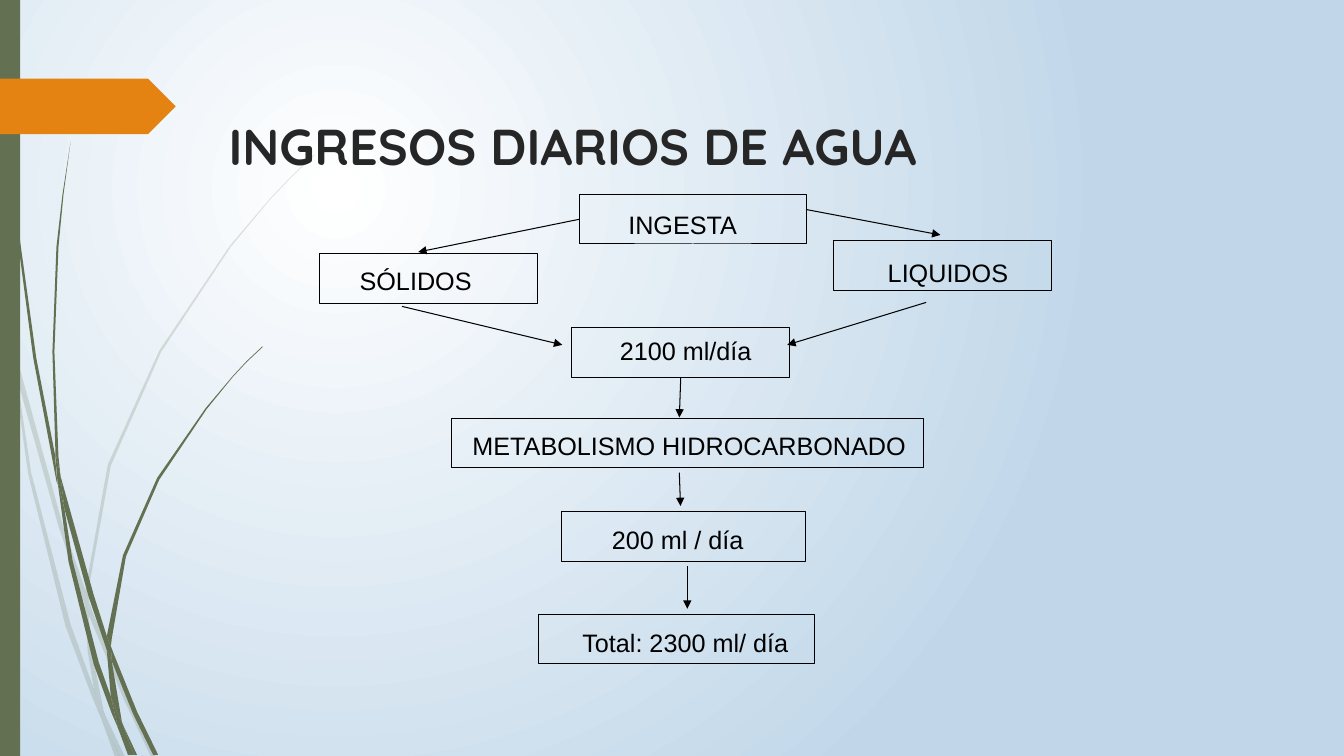
from lxml import etree
from pptx import Presentation
from pptx.dml.color import RGBColor
from pptx.enum.shapes import MSO_CONNECTOR as CONN, MSO_SHAPE as SHAPE
from pptx.enum.text import PP_ALIGN as ALIGN
from pptx.oxml import parse_xml
from pptx.oxml.ns import nsdecls, qn
from pptx.util import Cm, Pt

GREEN, ORANGE, BLACK = "637052", "E48312", "000000"


def rgb(value):
    return RGBColor.from_string(value)


def add_text(text, x, y, w, h, size=18, font="Arial", color=BLACK,
             bold=False, align=ALIGN.CENTER, wrap=False):
    tf = s.shapes.add_textbox(Cm(x), Cm(y), Cm(w), Cm(h)).text_frame
    tf.word_wrap = wrap
    p = tf.paragraphs[0]
    p.alignment = align
    r = p.add_run()
    r.text = text
    r.font.size, r.font.name, r.font.bold = Pt(size), font, bold
    r.font.color.rgb = rgb(color)


prs = Presentation()
prs.slide_width, prs.slide_height = Cm(33.87), Cm(19.05)
s = prs.slides.add_slide(prs.slide_layouts[6])

fill = s.background.fill
fill.solid()
solid = s.element.find(".//" + qn("p:bgPr")).find(qn("a:solidFill"))
solid.getparent().replace(solid, parse_xml(
    f'<a:gradFill {nsdecls("a")} rotWithShape="1"><a:gsLst>'
    '<a:gs pos="0"><a:srgbClr val="FFFFFF"/></a:gs>'
    '<a:gs pos="100000"><a:srgbClr val="C1D7E9"/></a:gs></a:gsLst>'
    '<a:path path="circle"><a:fillToRect l="50000" t="50000" r="100000" b="100000"/>'
    '</a:path></a:gradFill>'))

pale_blades = [
    [(11, 350), (9, 322), (0, 282), (0, 299), (10, 344)],
    [(58, 522), (84, 599), (85, 586), (62, 520), (14, 345), (17, 376)],
    [(92, 607), (88, 596), (88, 610), (123, 694), (150, 751), (155, 751), (127, 692)],
    [(119, 751), (124, 751), (105, 711)],
    [(93, 683), (70, 619), (31, 469), (17, 376), (11, 350), (28, 470), (65, 621),
     (92, 693), (101, 714), (99, 707)],
    [(84, 599), (87, 646), (93, 683), (96, 692), (105, 711), (103, 706), (91, 646),
     (88, 610), (88, 608)],
    [(88, 584), (110, 462), (160, 349), (229, 245), (268, 198), (290, 175), (312, 154),
     (312, 153), (289, 175), (268, 197), (228, 244), (158, 348), (107, 461), (85, 584),
     (85, 586), (88, 596)],
    [(101, 714), (114, 751), (119, 751)],
    [(88, 608), (88, 610), (88, 596), (85, 586), (84, 599)],
    [(96, 692), (93, 683), (99, 707), (101, 714), (119, 751), (105, 711)],
]
dark_blades = [
    [(7, 110), (17, 233), (33, 355), (56, 477), (57, 481), (55, 457), (55, 453),
     (36, 355), (19, 232), (8, 109), (5, 48), (4, 0), (3, 0), (4, 48)],
    [(88, 592), (106, 645), (106, 633), (106, 631), (93, 590), (60, 472), (64, 505)],
    [(113, 649), (110, 641), (111, 656), (132, 708), (152, 749), (157, 749), (136, 706)],
    [(110, 691), (98, 657), (72, 556), (64, 505), (57, 477), (68, 557), (93, 659),
     (111, 708), (117, 722), (116, 717)],
    [(60, 472), (58, 453), (54, 349), (58, 245), (63, 193), (70, 141), (62, 193),
     (56, 245), (52, 349), (55, 449)],
    [(133, 749), (136, 749), (122, 719)],
    [(57, 477), (64, 505), (60, 472), (55, 449), (55, 453)],
    [(111, 633), (125, 552), (158, 476), (205, 406), (231, 374), (245, 359), (261, 344),
     (260, 344), (245, 358), (231, 373), (204, 405), (156, 474), (122, 551), (106, 631),
     (110, 641)],
    [(117, 722), (127, 749), (131, 749)],
    [(106, 645), (110, 691), (116, 706), (122, 719), (121, 716), (111, 656), (109, 651)],
    [(106, 645), (109, 651), (111, 656), (110, 641), (106, 631), (106, 633)],
    [(116, 706), (110, 691), (116, 717), (117, 722), (130, 749), (133, 749), (122, 719)],
]
for blades, opacity in [(pale_blades, 20), (dark_blades, 100)]:
    for outline in blades:
        builder = s.shapes.build_freeform(*outline[0], scale=Cm(0.0254))
        builder.add_line_segments(outline[1:], close=True)
        sp = builder.convert_to_shape()
        sp.shadow.inherit = False
        sp.fill.solid()
        sp.fill.fore_color.rgb = rgb(GREEN)
        sp.line.fill.background()
        if opacity < 100:
            clr = sp.element.spPr.find(qn("a:solidFill")).find(qn("a:srgbClr"))
            etree.SubElement(clr, qn("a:alpha"), val=str(opacity * 1000))

for kind, y, w, h, color in [(SHAPE.RECTANGLE, 0, 0.51, 19.05, GREEN),
                             (SHAPE.PENTAGON, 1.98, 4.43, 1.4, ORANGE)]:
    sp = s.shapes.add_shape(kind, 0, Cm(y), Cm(w), Cm(h))
    sp.shadow.inherit = False
    sp.fill.solid()
    sp.fill.fore_color.rgb = rgb(color)
    sp.line.fill.background()

add_text("INGRESOS DIARIOS DE AGUA", 5.51, 2.77, 22.86, 1.19, size=36,
         font="Quicksand", color="262626", bold=True, align=ALIGN.LEFT, wrap=True)

steps = [
    ("INGESTA", 14.6, 4.9, 5.72, 15.54, 5.16, 3.33),
    ("LIQUIDOS", 21, 6.07, 5.51, 22.1, 6.35, 3.58),
    ("SÓLIDOS", 8.05, 6.4, 5.5, 8.8, 6.55, 3.35),
    ("2100 ml/día", 14.4, 8.26, 5.51, 15.35, 8.33, 3.86),
    ("METABOLISMO HIDROCARBONADO", 11.38, 10.54, 11.9, 11.58, 10.72, 11.58),
    ("200 ml / día", 14.15, 12.9, 6.15, 15.15, 13.1, 3.86),
    ("Total: 2300 ml/ día", 13.56, 15.48, 6.96, 14.36, 15.68, 5.82),
]
boxes = {}
for label, x, y, w, text_x, text_y, text_w in steps:
    sp = s.shapes.add_shape(SHAPE.RECTANGLE, Cm(x), Cm(y), Cm(w), Cm(1.25))
    sp.shadow.inherit = False
    sp.fill.background()
    sp.line.color.rgb = rgb(BLACK)
    sp.line.width = Pt(0.75)
    boxes[label] = sp
    add_text(label, text_x, text_y, text_w, 1.02)

arrows = [
    (14.6, 5.52, 10.54, 6.35, ("INGESTA", 1)),
    (20.32, 5.28, 23.7, 5.92, None),
    (23.34, 7.62, 19.84, 8.69, None),
    (10.13, 7.72, 14.17, 8.69, None),
    (17.15, 9.51, 17.12, 10.52, ("2100 ml/día", 2)),
    (17.12, 11.91, 17.15, 12.75, None),
    (17.32, 14.27, 17.32, 15.34, None),
]
for x1, y1, x2, y2, start in arrows:
    cx = s.shapes.add_connector(CONN.STRAIGHT, Cm(x1), Cm(y1), Cm(x2), Cm(y2))
    if start:
        cx.begin_connect(boxes[start[0]], start[1])
    cx.line.color.rgb = rgb(BLACK)
    cx.line.width = Pt(0.75)
    spPr = cx._element.spPr
    etree.SubElement(spPr.find(qn("a:ln")), qn("a:tailEnd"), type="triangle")
    etree.SubElement(spPr, qn("a:effectLst"))

prs.save("out.pptx")
